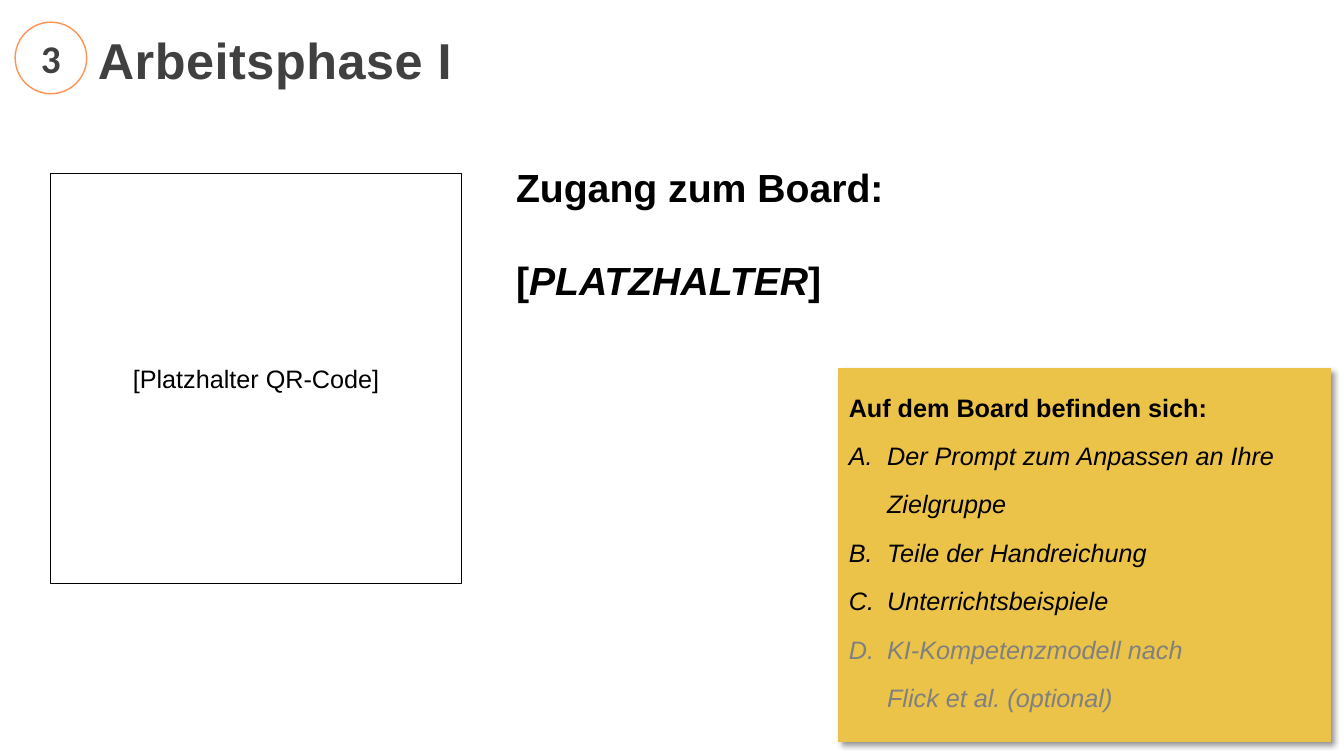
import pptx
import pptx.util
import pptx.dml.color
import pptx.enum.shapes
import pptx.enum.text
import pptx.oxml
import pptx.oxml.ns

Inches = pptx.util.Inches
Pt = pptx.util.Pt
Shapes = pptx.enum.shapes.MSO_SHAPE
Anchor = pptx.enum.text.MSO_ANCHOR
Align = pptx.enum.text.PP_ALIGN

COLOURS = {
    "black": "000000",
    "heading": "404040",
    "muted": "808080",
    "white": "FFFFFF",
    "card": "EBC349",
    "card_line": "EAC04C",
    "badge_line": "FF9352",
}


def colour(name):
    return pptx.dml.color.RGBColor.from_string(COLOURS[name])


def add_element(parent, tag, **attributes):
    element = parent.makeelement(pptx.oxml.ns.qn(tag), attributes)
    parent.append(element)
    return element


def set_indent(para, margin, first_line):
    properties = para._p.get_or_add_pPr()
    properties.set("marL", str(Inches(margin)))
    properties.set("indent", str(Inches(first_line)))
    return properties


def add_span(para, text, size, ink="black", bold=False, italic=False, font="Arial"):
    span = para.add_run()
    span.text = text
    span.font.name = font
    span.font.size = Pt(size)
    span.font.bold = bold
    span.font.italic = italic
    span.font.color.rgb = colour(ink)
    return span


def add_panel(page, kind, box, line, width, fill=None, anchor=Anchor.MIDDLE):
    panel = page.shapes.add_shape(kind, *map(Inches, box))
    panel.shadow.inherit = False
    if fill:
        panel.fill.solid()
        panel.fill.fore_color.rgb = colour(fill)
    else:
        panel.fill.background()
    panel.line.color.rgb = colour(line)
    panel.line.width = Pt(width)
    panel.text_frame.word_wrap = True
    panel.text_frame.vertical_anchor = anchor
    return panel


def add_heading(page, box):
    title = page.shapes.title
    title.left, title.top, title.width, title.height = map(Inches, box)
    frame = title.text_frame
    frame.vertical_anchor = Anchor.MIDDLE
    frame.auto_size = pptx.enum.text.MSO_AUTO_SIZE.NONE
    para = frame.paragraphs[0]
    para.alignment = Align.LEFT
    para.line_spacing = 0.9
    # Indent clears the round badge
    set_indent(para, 0.57, 0)
    span = add_span(para, "Arbeitsphase I", 36, "heading", bold=True)
    span.font._element.set("spc", "40")


def add_access(page, box):
    frame = page.shapes.add_textbox(*map(Inches, box)).text_frame
    frame.word_wrap = True
    add_span(frame.paragraphs[0], "Zugang zum Board:", 28, bold=True)
    para = frame.add_paragraph()
    para.space_before = Pt(33)
    for text, italic in (("[", False), ("PLATZHALTER", True), ("]", False)):
        add_span(para, text, 28, bold=True, italic=italic)


def add_contents(page, box):
    card = add_panel(page, Shapes.RECTANGLE, box, "card_line", 0.75, "card", Anchor.TOP)

    # Soft shadow towards the lower right
    effects = card._element.spPr.find(pptx.oxml.ns.qn("a:effectLst"))
    shadow = add_element(effects, "a:outerShdw", blurRad=str(Pt(4)), dist=str(Pt(3)),
                         dir="2700000", algn="tl", rotWithShape="0")
    tint = add_element(shadow, "a:srgbClr", val=COLOURS["black"])
    add_element(tint, "a:alpha", val="40000")

    # Heading and lettered list
    frame = card.text_frame
    para = frame.paragraphs[0]
    para.alignment = Align.LEFT
    para.line_spacing = 1.6
    add_span(para, "Auf dem Board befinden sich:", 18, bold=True)
    items = (
        (["Der Prompt zum Anpassen an Ihre Zielgruppe"], "black"),
        (["Teile der Handreichung"], "black"),
        (["Unterrichtsbeispiele"], "black"),
        (["KI-Kompetenzmodell nach", "Flick et al. (optional)"], "muted"),
    )
    for lines, ink in items:
        para = frame.add_paragraph()
        para.alignment = Align.LEFT
        para.line_spacing = 1.6
        properties = set_indent(para, 0.38, -0.38)
        add_element(properties, "a:buFont", typeface="+mj-lt")
        add_element(properties, "a:buAutoNum", type="alphaUcPeriod")
        for number, line in enumerate(lines):
            if number:
                para.add_line_break()
            add_span(para, line, 18, ink, italic=True)


def add_code_space(page, box):
    frame = add_panel(page, Shapes.RECTANGLE, box, "black", 1).text_frame
    para = frame.paragraphs[0]
    para.alignment = Align.CENTER
    add_span(para, "[Platzhalter QR-Code]", 18)


def add_badge(page, box):
    frame = add_panel(page, Shapes.OVAL, box, "badge_line", 1, "white").text_frame
    para = frame.paragraphs[0]
    para.alignment = Align.CENTER
    add_span(para, "3", 28, "heading", bold=True, font="Calibri")


def main():
    deck = pptx.Presentation()
    deck.slide_width = Inches(13.33)
    deck.slide_height = Inches(7.5)
    page = deck.slides.add_slide(deck.slide_layouts.get_by_name("Title Only"))
    page.background.fill.solid()
    page.background.fill.fore_color.rgb = colour("white")

    add_heading(page, (0.3, 0, 11.5, 1.25))
    add_access(page, (5.02, 1.57, 7.8, 1.51))
    add_contents(page, (8.32, 3.66, 4.88, 3.7))
    add_code_space(page, (0.5, 1.72, 4.08, 4.07))
    add_badge(page, (0.15, 0.22, 0.71, 0.71))
    deck.save("out.pptx")


if __name__ == "__main__":
    main()
